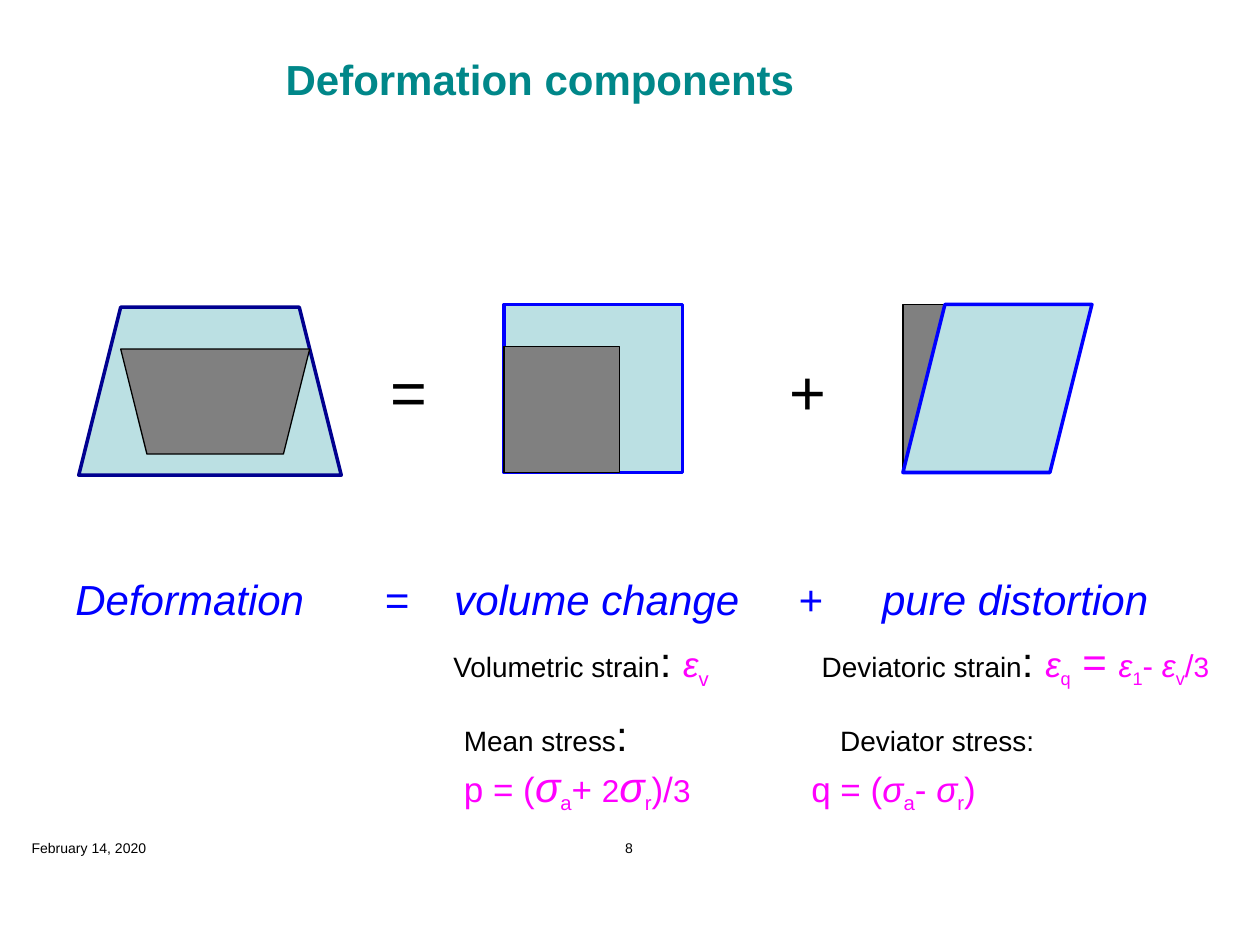
from pptx import Presentation
from pptx import util as u
from pptx.dml.color import RGBColor
from pptx.enum import shapes, text
from pptx.oxml.ns import qn
from lxml import etree

Pt = u.Pt
KIND = shapes.MSO_SHAPE
ALIGN = text.PP_ALIGN
BLACK = RGBColor(0, 0, 0)
TEAL = RGBColor(0x00, 0x87, 0x89)
BLUE = RGBColor(0, 0, 0xFF)
NAVY = RGBColor(0, 0, 0x90)
PINK = RGBColor(0xFF, 0, 0xFF)
PALE = RGBColor(0xBB, 0xE0, 0xE3)
GRAY = RGBColor(0x80, 0x80, 0x80)

ROMAN, ITALIC, SUB = {}, {"italic": True}, {"sub": True}

TITLE = ("Deformation components", (156, 18, 546, 54))

SHAPES = [
    (KIND.TRAPEZOID, (45, 175.5, 150, 96), PALE, NAVY, 2, False),
    (KIND.TRAPEZOID, (69, 199.5, 108, 60), GRAY, BLACK, 0.75, True),
    (KIND.RECTANGLE, (288, 174, 102, 96), PALE, BLUE, 2, False),
    (KIND.RECTANGLE, (288, 198, 66, 72), GRAY, BLACK, 0.75, False),
    (KIND.RECTANGLE, (516, 174, 84, 96), GRAY, BLACK, 0.75, False),
    (KIND.PARALLELOGRAM, (516, 174, 108, 96), PALE, BLUE, 2, False),
]

SIGNS = [("=", 216), ("+", 444)]
SIGN_TOP, SIGN_W, SIGN_H = 198, 72, 51

FOOTER = [
    ("February 14, 2020", (18, 479.5, 168, 10), ALIGN.LEFT),
    ("8", (332, 479.5, 55, 10), ALIGN.CENTER),
]

EQUATION = [([176.5, 216.5, 413, 461], [
    ("Deformation\t=\tvolume change\t+\tpure distortion", 24, BLUE, ITALIC),
])]

STRAINS = [([210.5], [
    ("Volumetric strain", 16, BLACK, ROMAN),
    (": ", 24, BLACK, ROMAN),
    ("ε", 20, PINK, ITALIC),
    ("v", 20, PINK, SUB),
    ("\t", 24, PINK, ROMAN),
    ("Deviatoric strain", 16, BLACK, ROMAN),
    (": ", 24, BLACK, ROMAN),
    ("ε", 20, PINK, ITALIC),
    ("q", 18, PINK, SUB),
    (" = ", 24, PINK, ROMAN),
    ("ε", 18, PINK, ITALIC),
    ("1", 18, PINK, SUB),
    ("- ", 18, PINK, ROMAN),
    ("ε", 18, PINK, ITALIC),
    ("v", 18, PINK, SUB),
    ("/", 18, PINK, ROMAN),
    ("3", 16, PINK, ROMAN),
])]

STRESSES = [
    ([215], [
        ("Mean stress", 16, BLACK, ROMAN),
        (":\t", 24, BLACK, ROMAN),
        ("Deviator stress:", 16, BLACK, ROMAN),
    ]),
    ([198.5], [
        ("p = (", 20, PINK, ROMAN),
        ("σ", 24, PINK, ITALIC),
        ("a", 20, PINK, SUB),
        ("+ ", 20, PINK, ROMAN),
        ("2", 18, PINK, ROMAN),
        ("σ", 24, PINK, ITALIC),
        ("r", 20, PINK, SUB),
        (")/", 20, PINK, ROMAN),
        ("3", 18, PINK, ROMAN),
        ("\tq = (", 20, PINK, ROMAN),
        ("σ", 20, PINK, ITALIC),
        ("a", 20, PINK, SUB),
        ("- ", 20, PINK, ROMAN),
        ("σ", 20, PINK, ITALIC),
        ("r", 20, PINK, SUB),
        (")", 20, PINK, ROMAN),
    ]),
]

FORMULAS = [
    (EQUATION, (36, 324, 678, 36.5)),
    (STRAINS, (252, 359.5, 468, 55.5)),
    (STRESSES, (258, 402, 414, 65.5)),
]


def points(box):
    return [Pt(n) for n in box]


def style(font, size, color, **extra):
    for key, val in {"name": "Arial", "size": Pt(size), **extra}.items():
        setattr(font, key, val)
    font.color.rgb = color


def add_run(para, words, size, color, form):
    run = para.add_run()
    run.text = words
    style(run.font, size, color, italic=form.get("italic", False))
    if form.get("sub"):
        run._r.get_or_add_rPr().set("baseline", "-25000")


def add_tabs(para, stops):
    tabs = etree.SubElement(para._p.get_or_add_pPr(), qn("a:tabLst"))
    for stop in stops:
        etree.SubElement(tabs, qn("a:tab"), pos=str(int(Pt(stop))), algn="l")


def add_text(slide, paras, box, align=ALIGN.LEFT, inset=None):
    frame = slide.shapes.add_textbox(*points(box)).text_frame
    frame.word_wrap = True
    if inset is not None:
        for side in ("left", "top", "right", "bottom"):
            setattr(frame, "margin_" + side, Pt(inset))
    for num, (stops, runs) in enumerate(paras):
        para = frame.add_paragraph() if num else frame.paragraphs[0]
        para.alignment = align
        if stops:
            add_tabs(para, stops)
        for run in runs:
            add_run(para, *run)


def add_shape(slide, kind, box, fill, line, width, flip):
    shape = slide.shapes.add_shape(kind, *points(box))
    shape.shadow.inherit = False
    shape.fill.solid()
    shape.fill.fore_color.rgb = fill
    shape.line.color.rgb = line
    shape.line.width = Pt(width)
    if flip:
        shape._element.spPr.xfrm.set("flipV", "1")


def add_title(slide, words, box):
    title = slide.shapes.title
    for key, val in zip(("left", "top", "width", "height"), points(box)):
        setattr(title, key, val)
    frame = title.text_frame
    frame.text = words
    frame.vertical_anchor = text.MSO_ANCHOR.MIDDLE
    para = frame.paragraphs[0]
    para.alignment = ALIGN.LEFT
    style(para.runs[0].font, 24, TEAL, bold=True)


def main():
    deck = Presentation()
    deck.slide_width, deck.slide_height = Pt(720), Pt(540)
    slide = deck.slides.add_slide(deck.slide_layouts[5])
    add_title(slide, *TITLE)
    for words, box, align in FOOTER:
        add_text(slide, [([], [(words, 8, BLACK, ROMAN)])], box, align, 0)
    for item in SHAPES:
        add_shape(slide, *item)
    for sign, left in SIGNS:
        add_text(slide, [([], [(sign, 36, BLACK, ROMAN)])],
                 (left, SIGN_TOP, SIGN_W, SIGN_H))
    for paras, box in FORMULAS:
        add_text(slide, paras, box)
    deck.save("out.pptx")


if __name__ == "__main__":
    main()
